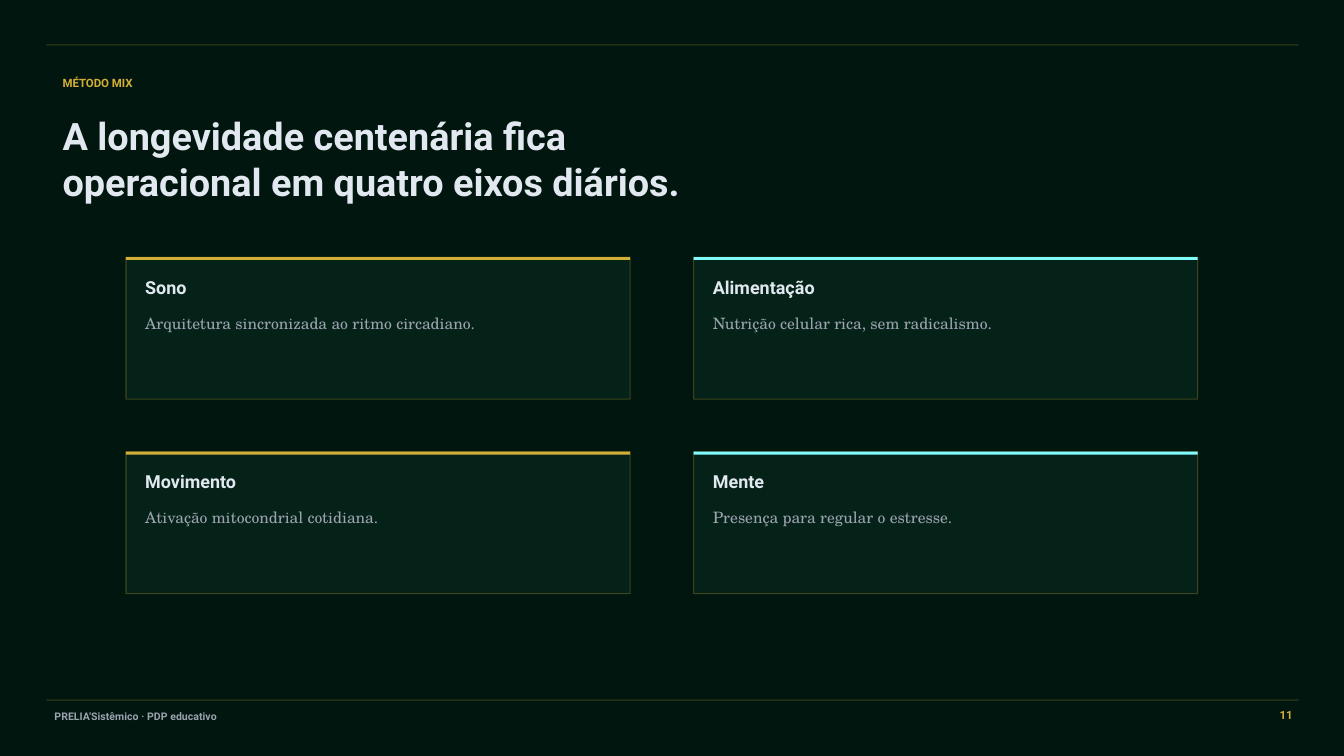
from lxml.etree import SubElement
from pptx import Presentation
from pptx.dml.color import RGBColor
from pptx.enum.shapes import MSO_SHAPE
from pptx.enum.text import PP_ALIGN
from pptx.oxml.ns import qn
from pptx.util import Inches, Pt

COLORS = {
    "background": "01160F",
    "card": "08291F",
    "gold": "D4AF37",
    "cyan": "7FFCFF",
    "light": "E2E8F0",
    "gray": "9CA3AF",
}
SANS, SERIF = "Roboto", "TeX Gyre Schola"

prs = Presentation()
prs.slide_width, prs.slide_height = Inches(13.33), Inches(7.5)
s = prs.slides.add_slide(prs.slide_layouts[6])
s.background.fill.solid()
s.background.fill.fore_color.rgb = RGBColor.from_string(COLORS["background"])


def add_box(x, y, w, h, color, opacity=100, outlined=False):
    sp = s.shapes.add_shape(MSO_SHAPE.RECTANGLE, Inches(x), Inches(y), Inches(w), Inches(h))
    sp.shadow.inherit = False
    sp.fill.solid()
    sp.fill.fore_color.rgb = RGBColor.from_string(COLORS[color])
    alphas = [(sp.fill, opacity)]
    if outlined:
        sp.line.width = Pt(0.75)
        sp.line.color.rgb = RGBColor.from_string(COLORS["gold"])
        alphas.append((sp.line.fill, 27))
    else:
        sp.line.fill.background()
    for fill, percent in alphas:
        if percent < 100:
            clr = fill._xPr.find(qn("a:solidFill")).find(qn("a:srgbClr"))
            SubElement(clr, qn("a:alpha")).set("val", str(percent * 1000))


def add_text(x, y, w, h, text, size, color, font=SANS, bold=True, align=PP_ALIGN.LEFT):
    tf = s.shapes.add_textbox(Inches(x), Inches(y), Inches(w), Inches(h)).text_frame
    tf.word_wrap = True
    tf.margin_left = tf.margin_top = tf.margin_right = tf.margin_bottom = 0
    p = tf.paragraphs[0]
    p.text = text
    p.alignment = align
    p.font.name, p.font.size, p.font.bold = font, Pt(size), bold
    p.font.color.rgb = RGBColor.from_string(COLORS[color])


# Header and footer rules
for y in (0.44, 6.94):
    add_box(0.46, y, 12.42, 0.01, "gold", opacity=27)

# Heading
add_text(0.62, 0.75, 5.42, 0.23, "MÉTODO MIX", 8.2, "gold")
add_text(0.62, 1.12, 6.15, 1.38,
         "A longevidade centenária fica operacional em quatro eixos diários.", 27, "light")

# Two-by-two grid of cards, one accent colour per column
LEFT, TOP, COL, ROW = 1.25, 2.55, 5.63, 1.93
CARD_W, CARD_H, PAD = 5, 1.41, 0.19
cards = [
    ("Sono", "Arquitetura sincronizada ao ritmo circadiano."),
    ("Alimentação", "Nutrição celular rica, sem radicalismo."),
    ("Movimento", "Ativação mitocondrial cotidiana."),
    ("Mente", "Presença para regular o estresse."),
]
for i, (axis, detail) in enumerate(cards):
    row, col = divmod(i, 2)
    x, y = LEFT + col * COL, TOP + row * ROW
    add_box(x, y, CARD_W, CARD_H, "card", opacity=67, outlined=True)
    add_box(x, y, CARD_W, 0.03, ("gold", "cyan")[col])
    add_text(x + PAD, y + PAD, CARD_W - 2 * PAD, 0.27, axis, 12.8, "light")
    add_text(x + PAD, y + 0.56, CARD_W - 2 * PAD, 0.72, detail, 11.2, "gray", SERIF, False)

# Footer
add_text(0.54, 7.04, 5.42, 0.19, "PRELIA'Sistêmico · PDP educativo", 7.5, "gray")
add_text(12.4, 7.02, 0.42, 0.19, "11", 8.2, "gold", align=PP_ALIGN.RIGHT)

prs.save("out.pptx")
